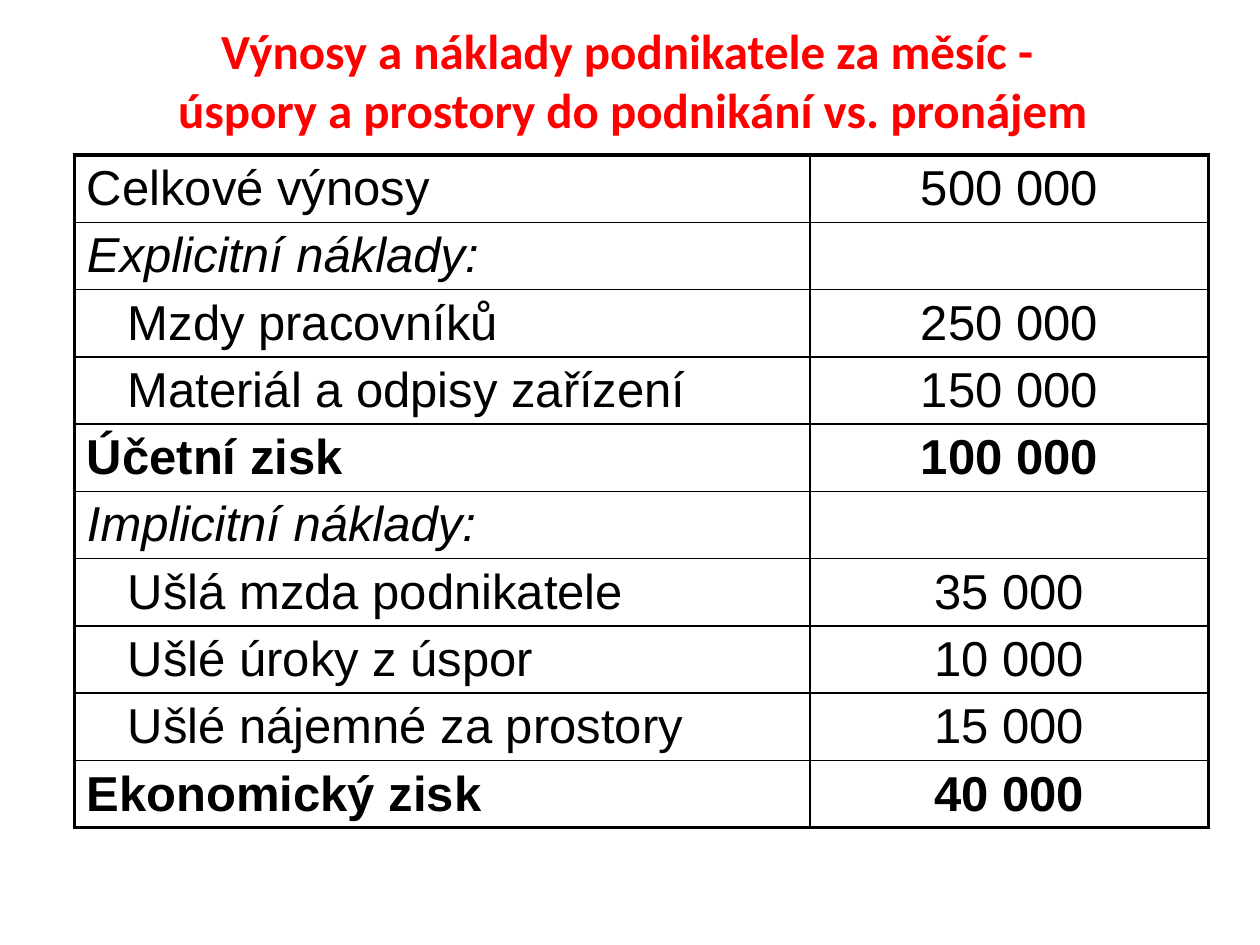
from lxml import etree
from pptx import Presentation
from pptx.dml.color import RGBColor
from pptx.enum import text
from pptx.oxml import ns
from pptx.util import Pt

TITLE = ["Výnosy a náklady podnikatele za měsíc - ",
         "úspory a prostory do podnikání vs. pronájem"]
ROWS = [
    ("Celkové výnosy", "500 000", "plain"),
    ("Explicitní náklady:", "", "heading"),
    ("Mzdy pracovníků", "250 000", "item"),
    ("Materiál a odpisy zařízení", "150 000", "item"),
    ("Účetní zisk", "100 000", "profit"),
    ("Implicitní náklady:", "", "heading"),
    ("Ušlá mzda podnikatele", "35 000", "item"),
    ("Ušlé úroky z úspor", "10 000", "item"),
    ("Ušlé nájemné za prostory", "15 000", "item"),
    ("Ekonomický zisk", "40 000", "profit"),
]
ROW_FONTS = {"plain": {}, "item": {}, "heading": {"italic": True}, "profit": {"bold": True}}
COLUMN_WIDTHS = [420.5, 227.5]
ROW_HEIGHT = 38.45
ITEM_INDENT = 23.35
CELL_FORMAT = {"margin_left": Pt(7.2), "margin_right": Pt(7.2),
               "margin_top": Pt(3.6), "margin_bottom": Pt(1)}
OUTER_LINE, INNER_LINE = 2.25, 1
BLACK, RED, WHITE = "000000", "FF0000", "FFFFFF"


def color(hex_code):
    return RGBColor.from_string(hex_code)


def apply(target, values):
    for name, value in values.items():
        setattr(target, name, value)


def style_font(font, name, hex_code, **extra):
    apply(font, {"name": name, "size": Pt(28), **extra})
    font.color.rgb = color(hex_code)


def add_borders(cell, widths):
    """Insert the edge lines ahead of the cell fill, as the schema orders them."""
    properties = cell._tc.get_or_add_tcPr()
    for position, (edge, width) in enumerate(widths.items()):
        line = etree.Element(ns.qn(f"a:ln{edge}"), w=str(Pt(width)))
        fill = etree.SubElement(line, ns.qn("a:solidFill"))
        etree.SubElement(fill, ns.qn("a:srgbClr"), val=BLACK)
        properties.insert(position, line)


def add_title(slide):
    box = slide.shapes.add_textbox(Pt(22.3), Pt(17.7), Pt(678.2), Pt(55.4))
    box.fill.solid()
    box.fill.fore_color.rgb = color(WHITE)
    apply(box.text_frame, {"word_wrap": True, "vertical_anchor": text.MSO_ANCHOR.MIDDLE})
    paragraph = box.text_frame.paragraphs[0]
    paragraph.text = "\v".join(TITLE)
    paragraph.alignment = text.PP_ALIGN.CENTER
    style_font(paragraph.font, "Calibri", RED, bold=True)


def add_profit_table(slide):
    table = slide.shapes.add_table(
        len(ROWS), len(COLUMN_WIDTHS), Pt(42.5), Pt(88.6),
        Pt(sum(COLUMN_WIDTHS)), Pt(ROW_HEIGHT * len(ROWS))).table
    apply(table, {"first_row": False, "horz_banding": False})
    for column, width in zip(table.columns, COLUMN_WIDTHS):
        column.width = Pt(width)
    last_row, last_column = len(ROWS) - 1, len(COLUMN_WIDTHS) - 1
    for r, (label, amount, kind) in enumerate(ROWS):
        table.rows[r].height = Pt(ROW_HEIGHT)
        for c, wording in enumerate((label, amount)):
            cell = table.cell(r, c)
            apply(cell, CELL_FORMAT)
            cell.fill.background()
            on_outside = {"L": c == 0, "R": c == last_column, "T": r == 0, "B": r == last_row}
            add_borders(cell, {edge: OUTER_LINE if outside else INNER_LINE
                               for edge, outside in on_outside.items()})
            paragraph = cell.text_frame.paragraphs[0]
            paragraph.text = wording
            if c == last_column:
                paragraph.alignment = text.PP_ALIGN.CENTER
            elif kind == "item":
                paragraph._p.get_or_add_pPr().set("marL", str(Pt(ITEM_INDENT)))
            style_font(paragraph.font, "Arial", BLACK, **ROW_FONTS[kind])


def main():
    deck = Presentation()
    apply(deck, {"slide_width": Pt(720), "slide_height": Pt(540)})
    slide = deck.slides.add_slide(deck.slide_layouts[6])
    add_title(slide)
    add_profit_table(slide)
    deck.save("out.pptx")


if __name__ == "__main__":
    main()
